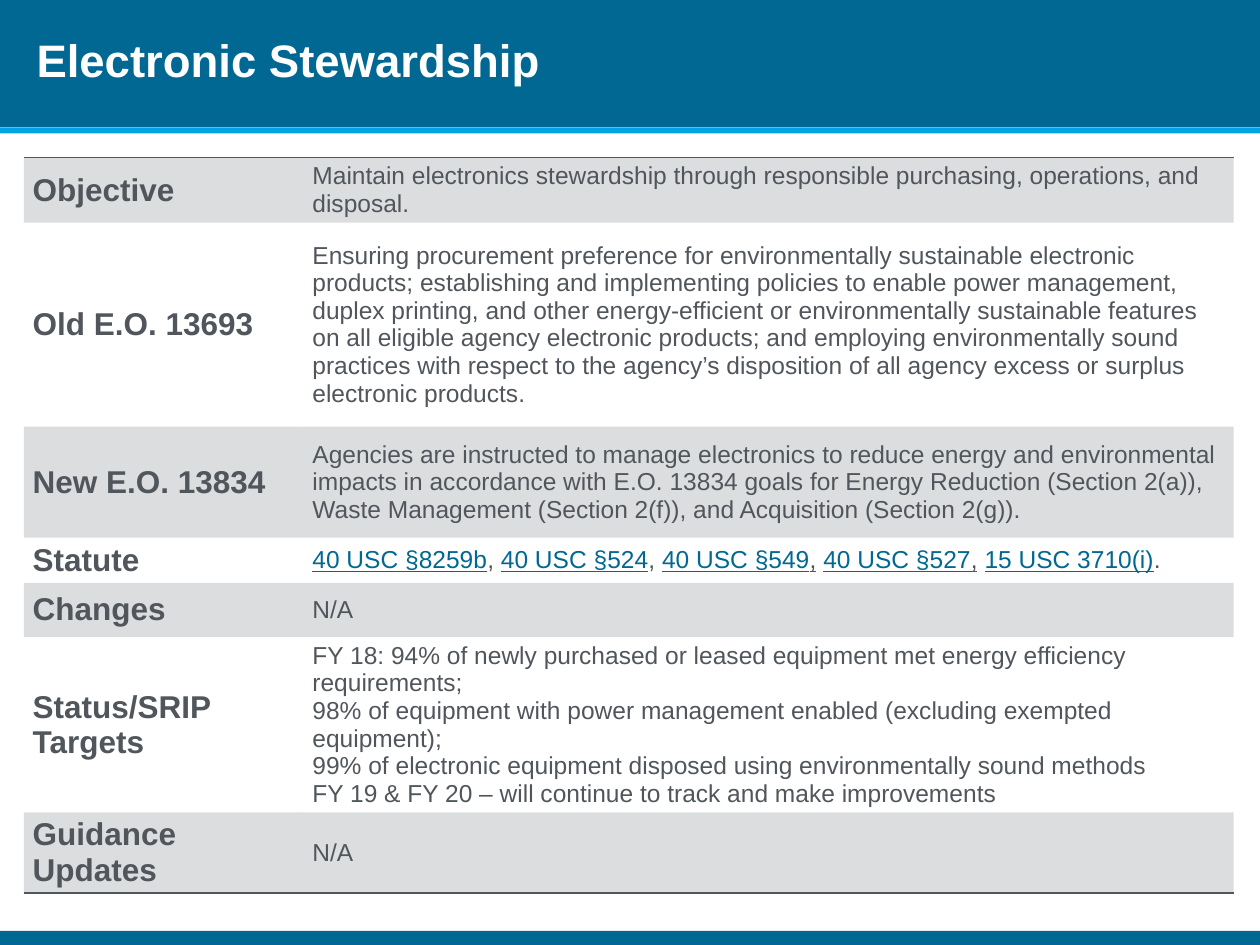
from dataclasses import dataclass
from lxml.etree import SubElement
from pptx import Presentation
from pptx.dml.color import RGBColor
from pptx.enum.shapes import MSO_SHAPE
from pptx.enum.text import MSO_ANCHOR, PP_ALIGN
from pptx.oxml.ns import qn
from pptx.util import Inches, Pt


@dataclass(frozen=True)
class Theme:
    """Colours, font and type sizes of the slide."""
    blue: str = "006892"
    sky: str = "00A4E4"
    grey: str = "50565C"
    white: str = "FFFFFF"
    font: str = "Arial"
    title: int = 26
    label: int = 18
    body: int = 14


T = Theme()
W, H = 10, 7.5
LEFT, TOP = 0.19, 1.25
COLS = (2.22, 7.38)
ROW_HEIGHTS = (0.3, 1.62, 0.88, 0.3, 0.43, 1.09, 0.54)
NO_STYLE = "{2D5ABB26-0587-4C30-8999-92F81FD0307C}"
LINK = {"color": T.blue, "underline": True}
LINE = {"underline": True}

STATUTES = [
    ("40 USC §8259b", LINK), (", ", {}),
    ("40 USC §524", LINK), (", ", {}),
    ("40 USC §549", LINK), (",", LINE), (" ", {}),
    ("40 USC §527", LINK), (",", LINE), (" ", {}),
    ("15 USC 3710(i)", LINK), (".", {}),
]

ROWS = [
    ("Objective", ["Maintain electronics stewardship through responsible purchasing, "
                   "operations, and disposal."]),
    ("Old E.O. 13693", [
        "Ensuring procurement preference for environmentally sustainable electronic products; "
        "establishing and implementing policies to enable power management, duplex printing, "
        "and other energy-efficient or environmentally sustainable features on all eligible "
        "agency electronic products; and employing environmentally sound practices with respect "
        "to the agency’s disposition of all agency excess or surplus electronic products."]),
    ("New E.O. 13834", [
        "Agencies are instructed to manage electronics to reduce energy and environmental "
        "impacts in accordance with E.O. 13834 goals for Energy Reduction (Section 2(a)), "
        "Waste Management (Section 2(f)), and Acquisition (Section 2(g))."]),
    ("Statute", [STATUTES]),
    ("Changes", ["N/A"]),
    ("Status/SRIP Targets", [
        "FY 18: 94% of newly purchased or leased equipment met energy efficiency requirements;",
        "98% of equipment with power management enabled (excluding exempted equipment);",
        "99% of electronic equipment disposed using environmentally sound methods",
        "FY 19 & FY 20 – will continue to track and make improvements"]),
    ("Guidance Updates", ["N/A"]),
]


def add_run(p, text, size=T.body, color=T.grey, bold=False, underline=False):
    """Append formatted text to a paragraph."""
    r = p.add_run()
    r.text = text
    r.font.name, r.font.size = T.font, Pt(size)
    r.font.bold, r.font.underline = bold, underline
    r.font.color.rgb = RGBColor.from_string(color)


def add_bar(s, top, height, color):
    """Draw a full-width bar placed by shares of the slide height."""
    bar = s.shapes.add_shape(MSO_SHAPE.RECTANGLE, 0, Inches(top * H),
                             Inches(W), Inches(height * H))
    bar.shadow.inherit = False
    bar.fill.solid()
    bar.fill.fore_color.rgb = RGBColor.from_string(color)
    bar.line.fill.background()


def set_title(s, text):
    """Place the title placeholder on top of the header bar."""
    sp = s.shapes.title
    sp.left, sp.top = Inches(LEFT), 0
    sp.width, sp.height = Inches(6.19), Inches(0.99)
    tf = sp.text_frame
    tf.word_wrap = True
    tf.vertical_anchor = MSO_ANCHOR.MIDDLE
    p = tf.paragraphs[0]
    p.alignment, p.line_spacing = PP_ALIGN.LEFT, Pt(28)
    add_run(p, text, size=T.title, color=T.white, bold=True)
    sp.element.getparent().append(sp.element)


def add_border(cell, side):
    """Rule one side of a cell, given as lnT or lnB."""
    ln = SubElement(cell._tc.get_or_add_tcPr(), qn(f"a:{side}"), w=str(Pt(1)))
    SubElement(SubElement(ln, qn("a:solidFill")), qn("a:srgbClr"), val=T.grey)


def shade(cell):
    """Fill a cell with the grey at 20% opacity."""
    cell.fill.solid()
    cell.fill.fore_color.rgb = RGBColor.from_string(T.grey)
    color = next(cell._tc.tcPr.find(qn("a:solidFill")).iter(qn("a:srgbClr")))
    SubElement(color, qn("a:alpha"), val="20000")


def fill_cell(cell, paragraphs, **fmt):
    """Write paragraphs, each a string or a list of formatted runs."""
    cell.vertical_anchor = MSO_ANCHOR.MIDDLE
    cell.margin_left = cell.margin_right = Inches(0.07)
    cell.margin_top = cell.margin_bottom = Inches(0.04)
    tf = cell.text_frame
    for i, content in enumerate(paragraphs):
        p = tf.add_paragraph() if i else tf.paragraphs[0]
        runs = [(content, {})] if isinstance(content, str) else content
        for text, extra in runs:
            add_run(p, text, **fmt, **extra)


def add_topics(s):
    """Add the table of topics with shaded alternate rows."""
    frame = s.shapes.add_table(len(ROWS), len(COLS), Inches(LEFT), Inches(TOP),
                               Inches(sum(COLS)), Inches(sum(ROW_HEIGHTS)))
    table = frame.table
    table.first_row = table.horz_banding = False
    table._tbl.tblPr.find(qn("a:tableStyleId")).text = NO_STYLE
    for col, width in zip(table.columns, COLS):
        col.width = Inches(width)
    for i, (label, paragraphs) in enumerate(ROWS):
        row = table.rows[i]
        row.height = Inches(ROW_HEIGHTS[i])
        fill_cell(row.cells[0], [label], size=T.label, bold=True)
        fill_cell(row.cells[1], paragraphs)
        for cell in row.cells:
            if i == 0:
                add_border(cell, "lnT")
            if i == len(ROWS) - 1:
                add_border(cell, "lnB")
            if i % 2:
                cell.fill.background()
            else:
                shade(cell)


def main():
    """Build and save the slide."""
    prs = Presentation()
    prs.slide_width, prs.slide_height = Inches(W), Inches(H)
    s = prs.slides.add_slide(prs.slide_layouts[5])
    add_bar(s, 0, 0.135, T.blue)
    add_bar(s, 0.985, 0.015, T.blue)
    add_bar(s, 0.135, 0.0062, T.sky)
    add_topics(s)
    set_title(s, "Electronic Stewardship")
    prs.save("out.pptx")


if __name__ == "__main__":
    main()
